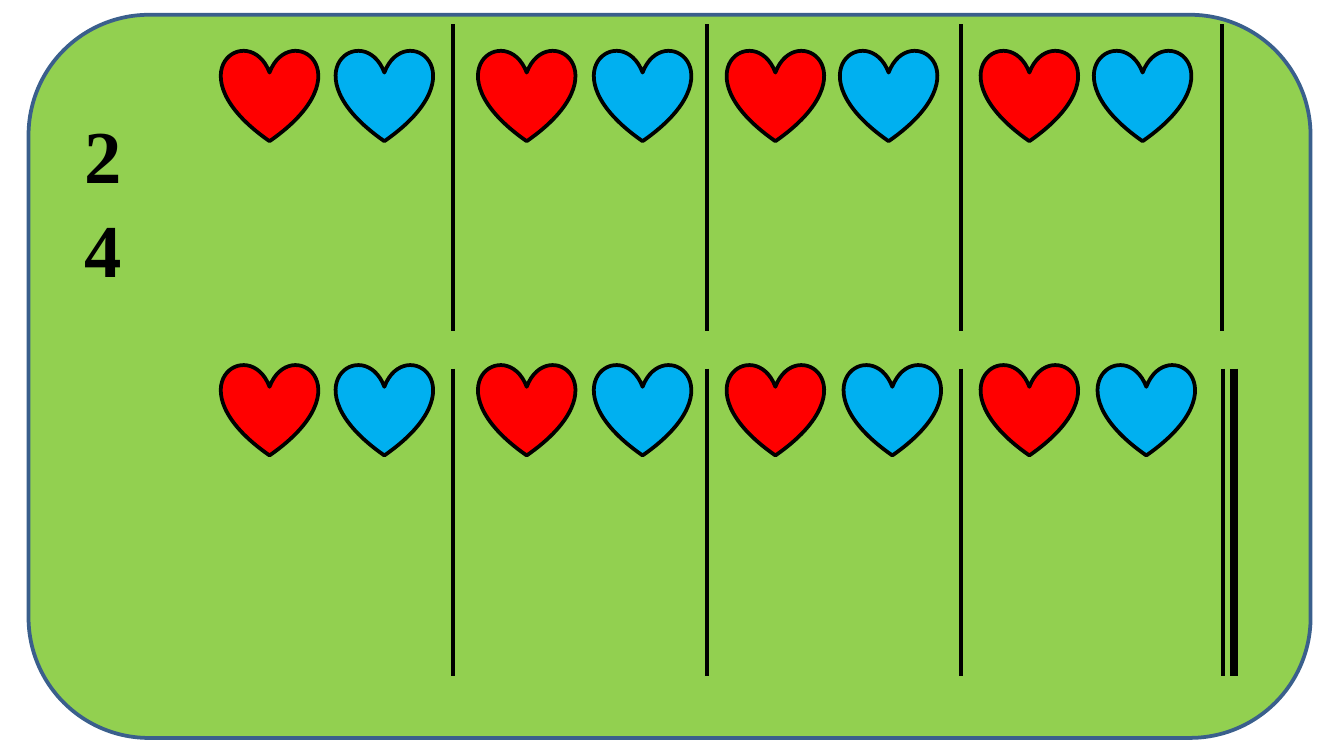
from dataclasses import dataclass

from lxml import etree
from pptx import Presentation
from pptx import util as u
from pptx.dml.color import RGBColor
from pptx.enum import shapes, text
from pptx.oxml import ns


@dataclass(frozen=True)
class Theme:
    card: RGBColor = RGBColor.from_string("92D050")
    card_line: RGBColor = RGBColor.from_string("3A5F8C")
    red: RGBColor = RGBColor.from_string("FF0000")
    blue: RGBColor = RGBColor.from_string("00B0F0")
    black: RGBColor = RGBColor.from_string("000000")
    font: str = "Times New Roman"
    meter_size: float = 40
    outline: float = 2
    bar: float = 2.25
    final_bar: float = 4.5


THEME = Theme()

# Positions in cm: first beats, second beats and bar lines of each row
RED_LEFTS = (4.18, 9.04, 13.74, 18.54)
BAR_STEP = 4.8
INNER_BARS = [8.56 + BAR_STEP * index for index in range(3)]
ROWS = (
    {"heart_top": 0.94, "bar_top": 0.46,
     "blue_lefts": (6.35, 11.23, 15.88, 20.68), "end_bar": 23.09},
    {"heart_top": 6.88, "bar_top": 6.97,
     "blue_lefts": (6.35, 11.23, 15.95, 20.75), "end_bar": 23.11},
)
HEART_SIZE = (1.83, 1.73)
BAR_HEIGHT = 5.8
FINAL_BAR_LEFT = 23.32


def set_values(target, values):
    for name, value in values.items():
        setattr(target, name, value)


def add_filled_shape(slide, kind, box, fill, line):
    shape = slide.shapes.add_shape(kind, *map(u.Cm, box))
    shape.shadow.inherit = False
    shape.fill.solid()
    shape.fill.fore_color.rgb = fill
    shape.line.color.rgb = line
    shape.line.width = u.Pt(THEME.outline)


def add_heart(slide, left, top, color):
    add_filled_shape(slide, shapes.MSO_SHAPE.HEART, (left, top, *HEART_SIZE),
                     color, THEME.black)


def add_bar(slide, left, top, width):
    connector = slide.shapes.add_connector(
        shapes.MSO_CONNECTOR.STRAIGHT,
        u.Cm(left), u.Cm(top), u.Cm(left), u.Cm(top + BAR_HEIGHT))
    connector.line.color.rgb = THEME.black
    connector.line.width = u.Pt(width)
    properties = connector._element.spPr
    etree.SubElement(properties, ns.qn("a:effectLst"))


def add_meter(slide, digits, box):
    frame = slide.shapes.add_textbox(*map(u.Cm, box)).text_frame
    set_values(frame, {"word_wrap": True,
                       "auto_size": text.MSO_AUTO_SIZE.SHAPE_TO_FIT_TEXT,
                       "text": "\n".join(digits)})
    for paragraph in frame.paragraphs:
        paragraph.line_spacing = 1.05
        set_values(paragraph.font, {"name": THEME.font, "bold": True,
                                    "size": u.Pt(THEME.meter_size)})
        paragraph.font.color.rgb = THEME.black


def main():
    presentation = Presentation()
    set_values(presentation, {"slide_width": u.Cm(25.4),
                              "slide_height": u.Cm(14.29)})
    slide = presentation.slides.add_slide(presentation.slide_layouts[6])

    # Card
    add_filled_shape(slide, shapes.MSO_SHAPE.ROUNDED_RECTANGLE,
                     (0.54, 0.28, 24.23, 13.67), THEME.card, THEME.card_line)

    # Beats: a red and a blue heart in each measure
    for row in ROWS:
        for red_left, blue_left in zip(RED_LEFTS, row["blue_lefts"]):
            add_heart(slide, red_left, row["heart_top"], THEME.red)
            add_heart(slide, blue_left, row["heart_top"], THEME.blue)

    # Time signature
    add_meter(slide, "24", (1.35, 1.85, 1.45, 3.68))

    # Bar lines, with a thick one at the end
    for row in ROWS:
        for left in (*INNER_BARS, row["end_bar"]):
            add_bar(slide, left, row["bar_top"], THEME.bar)
    add_bar(slide, FINAL_BAR_LEFT, ROWS[-1]["bar_top"], THEME.final_bar)

    presentation.save("out.pptx")


if __name__ == "__main__":
    main()
